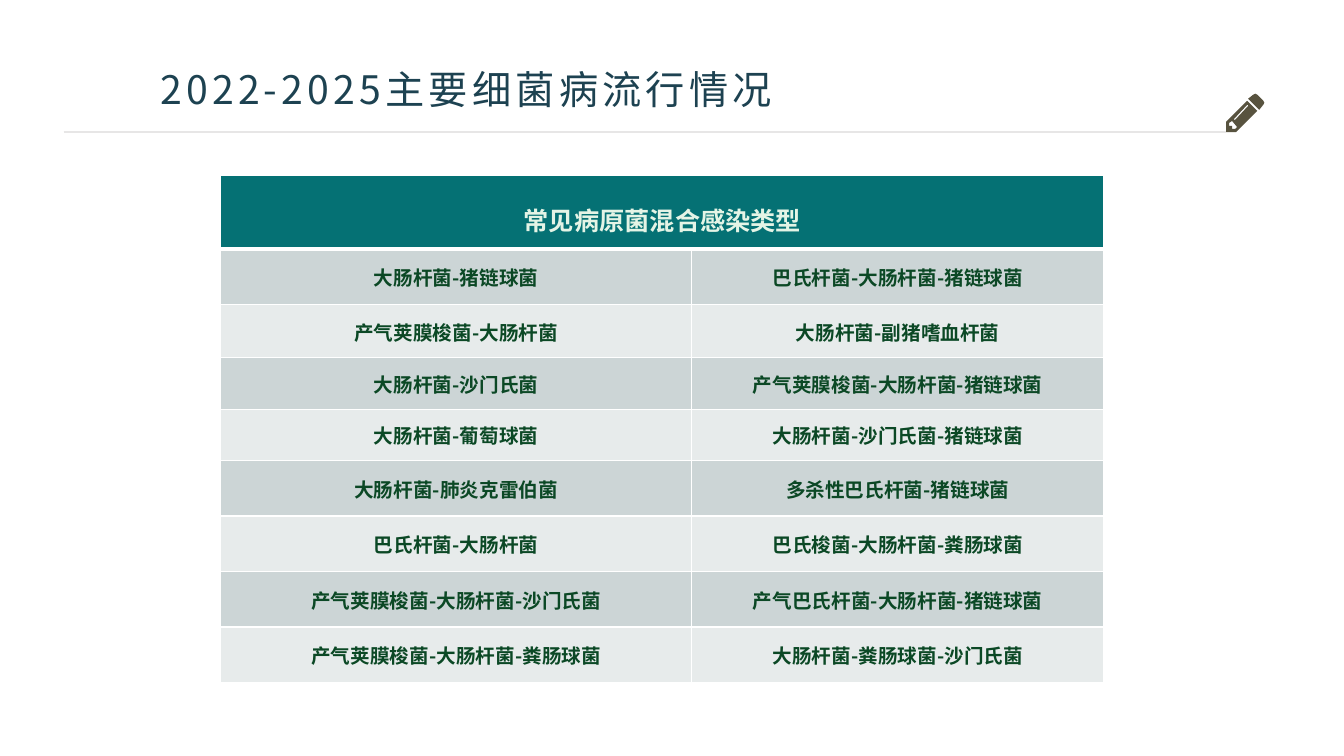
from lxml import etree
from pptx import Presentation
from pptx.dml.color import RGBColor
from pptx.enum.shapes import MSO_CONNECTOR
from pptx.enum.text import MSO_ANCHOR, MSO_AUTO_SIZE, PP_ALIGN
from pptx.oxml.ns import qn
from pptx.util import Inches, Pt

STRAIGHT = MSO_CONNECTOR.STRAIGHT
MIDDLE = MSO_ANCHOR.MIDDLE
GROW = MSO_AUTO_SIZE.SHAPE_TO_FIT_TEXT
LEFT, CENTER = PP_ALIGN.LEFT, PP_ALIGN.CENTER

FONT = "Noto Sans CJK SC"
WHITE = RGBColor(0xFF, 0xFF, 0xFF)
NAVY = RGBColor(0x1D, 0x42, 0x51)
TEAL = RGBColor(0x05, 0x71, 0x74)
MINT = RGBColor(0xE4, 0xF4, 0xE6)
GREEN = RGBColor(0x0B, 0x48, 0x25)
BANDS = (RGBColor(0xCC, 0xD5, 0xD6), RGBColor(0xE7, 0xEB, 0xEB))
RULE_GRAY = RGBColor(0xE7, 0xE6, 0xE6)
PENCIL_BROWN = RGBColor(0x58, 0x53, 0x3F)

SLIDE_W, SLIDE_H = 13.33, 7.5
RULE_Y, RULE_LEFT, PENCIL_X = 1.31, 0.63, 12.16
TABLE_LEFT, TABLE_TOP = 2.19, 1.74
COLUMN_WIDTHS = (4.67, 4.09)
ROW_HEIGHTS = (0.73, 0.55, 0.53, 0.51, 0.51) + (0.55,) * 4

TITLE = "2022-2025主要细菌病流行情况"
HEADING = "常见病原菌混合感染类型"
INFECTIONS = (
    ("大肠杆菌-猪链球菌", "巴氏杆菌-大肠杆菌-猪链球菌"),
    ("产气荚膜梭菌-大肠杆菌", "大肠杆菌-副猪嗜血杆菌"),
    ("大肠杆菌-沙门氏菌", "产气荚膜梭菌-大肠杆菌-猪链球菌"),
    ("大肠杆菌-葡萄球菌", "大肠杆菌-沙门氏菌-猪链球菌"),
    ("大肠杆菌-肺炎克雷伯菌", "多杀性巴氏杆菌-猪链球菌"),
    ("巴氏杆菌-大肠杆菌", "巴氏梭菌-大肠杆菌-粪肠球菌"),
    ("产气荚膜梭菌-大肠杆菌-沙门氏菌", "产气巴氏杆菌-大肠杆菌-猪链球菌"),
    ("产气荚膜梭菌-大肠杆菌-粪肠球菌", "大肠杆菌-粪肠球菌-沙门氏菌"),
)

# Pencil outlines in hundredths of an inch from the slide's corner
PENCIL_END = [[(1238, 98), (1243, 94), (1245, 93), (1247, 94), (1253, 100),
               (1254, 102), (1253, 104), (1249, 109)]]
PENCIL_BODY = [
    [(1237, 100), (1247, 110), (1226, 131), (1216, 131), (1216, 121)],
    [(1237, 104), (1224, 118), (1224, 119), (1225, 119), (1238, 105), (1238, 104)],
    [(1222, 120), (1219, 122), (1219, 125), (1222, 125), (1222, 128),
     (1225, 128), (1227, 126)],
]


def add_text(paragraph, text, size, color, bold=False, spacing=0):
    run = paragraph.add_run()
    run.text = text
    run.font.size = Pt(size)
    run.font.bold = bold
    run.font.color.rgb = color
    run.font.name = FONT
    properties = run._r.get_or_add_rPr()
    etree.SubElement(properties, qn("a:ea")).set("typeface", FONT)
    if spacing:
        properties.set("spc", str(spacing * 100))


def add_title(slide):
    title = slide.shapes.title
    title.left, title.top = Inches(1.49), Inches(0.6)
    title.width, title.height = Inches(7.35), Inches(0.57)
    frame = title.text_frame
    frame.word_wrap = True
    frame.auto_size = GROW
    frame.vertical_anchor = MIDDLE
    paragraph = frame.paragraphs[0]
    paragraph.alignment = LEFT
    add_text(paragraph, TITLE, 28, NAVY, spacing=3)


def add_rule(slide):
    rule = slide.shapes.add_connector(
        STRAIGHT, Inches(RULE_LEFT), Inches(RULE_Y), Inches(PENCIL_X), Inches(RULE_Y))
    rule.line.color.rgb = RULE_GRAY
    rule.line.width = Pt(2)
    etree.SubElement(rule._element.spPr, qn("a:effectLst"))


def add_outline(slide, contours):
    builder = slide.shapes.build_freeform(*contours[0][0], scale=Inches(0.01))
    builder.add_line_segments(contours[0][1:], close=True)
    for hole in contours[1:]:
        builder.move_to(*hole[0])
        builder.add_line_segments(hole[1:], close=True)
    outline = builder.convert_to_shape()
    outline.shadow.inherit = False
    outline.fill.solid()
    outline.fill.fore_color.rgb = PENCIL_BROWN
    outline.line.fill.background()


def set_borders(cell, bottom):
    properties = cell._tc.get_or_add_tcPr()
    sides = (("a:lnL", 1), ("a:lnR", 1), ("a:lnT", 1), ("a:lnB", bottom))
    for position, (side, width) in enumerate(sides):
        border = etree.Element(qn(side), w=str(Pt(width)))
        fill = etree.SubElement(border, qn("a:solidFill"))
        etree.SubElement(fill, qn("a:srgbClr")).set("val", str(WHITE))
        properties.insert(position, border)


def style_cell(cell, fill, margins, bottom=1):
    cell.fill.solid()
    cell.fill.fore_color.rgb = fill
    cell.vertical_anchor = MIDDLE
    (cell.margin_left, cell.margin_top,
     cell.margin_right, cell.margin_bottom) = map(Inches, margins)
    set_borders(cell, bottom)
    paragraph = cell.text_frame.paragraphs[0]
    paragraph.alignment = CENTER
    return paragraph


def add_infection_table(slide):
    table = slide.shapes.add_table(
        len(ROW_HEIGHTS), len(COLUMN_WIDTHS), Inches(TABLE_LEFT), Inches(TABLE_TOP),
        Inches(sum(COLUMN_WIDTHS)), Inches(sum(ROW_HEIGHTS))).table
    for column, width in zip(table.columns, COLUMN_WIDTHS):
        column.width = Inches(width)
    for row, height in zip(table.rows, ROW_HEIGHTS):
        row.height = Inches(height)

    # Heading across both columns
    table.cell(0, 0).merge(table.cell(0, 1))
    for cell in table.rows[0].cells:
        style_cell(cell, TEAL, (0.07, 0.04, 0.07, 0.04), bottom=3)
    heading = table.cell(0, 0).text_frame.paragraphs[0]
    heading.line_spacing = 1.4
    add_text(heading, HEADING, 18, MINT, bold=True)

    # Banded rows of infection types
    for r, infections in enumerate(INFECTIONS):
        for c, infection in enumerate(infections):
            paragraph = style_cell(
                table.cell(r + 1, c), BANDS[r % 2], (0.01, 0.01, 0.01, 0))
            add_text(paragraph, infection, 14, GREEN, bold=True)


def main():
    deck = Presentation()
    deck.slide_width, deck.slide_height = Inches(SLIDE_W), Inches(SLIDE_H)
    slide = deck.slides.add_slide(deck.slide_layouts[5])
    slide.background.fill.solid()
    slide.background.fill.fore_color.rgb = WHITE

    # Header with its rule and pencil
    add_outline(slide, PENCIL_END)
    add_outline(slide, PENCIL_BODY)
    add_rule(slide)
    add_title(slide)

    add_infection_table(slide)
    deck.save("out.pptx")


if __name__ == "__main__":
    main()
